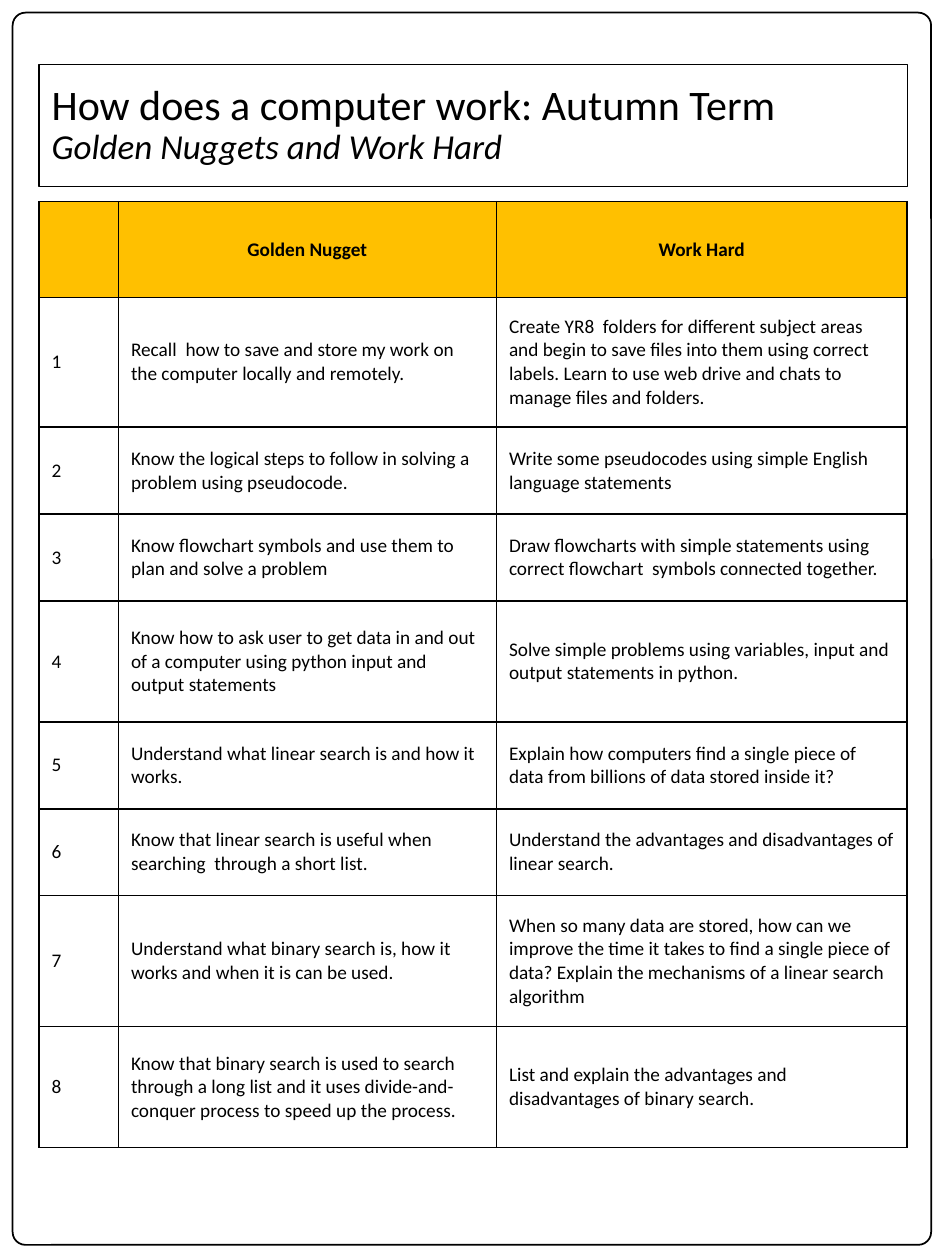
from dataclasses import dataclass

from lxml import etree
from pptx import Presentation
from pptx.dml.color import RGBColor
from pptx.enum import shapes, text
from pptx.oxml import ns
from pptx.util import Inches, Pt


@dataclass(frozen=True)
class Theme:
    font: str = "Calibri"
    ink: str = "000000"
    header: str = "FFC000"
    title: int = 24
    subtitle: int = 20
    body: int = 11
    thin: float = 0.75
    line: float = 1


THEME = Theme()

COLUMN_WIDTHS = [0.63, 3, 3.26]
ROW_HEIGHTS = [0.76, 1.03, 0.69, 0.69, 0.96, 0.69, 0.69, 1.04, 0.96]
HEADINGS = ("", "Golden Nugget", "Work Hard")
LESSONS = [
    ("Recall  how to save and store my work on the computer locally and remotely.",
     "Create YR8  folders for different subject areas and begin to save files into them "
     "using correct labels. Learn to use web drive and chats to manage files and folders."),
    ("Know the logical steps to follow in solving a problem using pseudocode.",
     "Write some pseudocodes using simple English language statements"),
    ("Know flowchart symbols and use them to  plan and solve a problem",
     "Draw flowcharts with simple statements using correct flowchart  symbols "
     "connected together."),
    ("Know how to ask user to get data in and out of a computer using python input and "
     "output statements",
     "Solve simple problems using variables, input and output statements in python."),
    ("Understand what linear search is and how it works.",
     "Explain how computers find a single piece of  data from billions of data stored "
     "inside it?"),
    ("Know that linear search is useful when searching  through a short list.",
     "Understand the advantages and disadvantages of linear search."),
    ("Understand what binary search is, how it works and when it is can be used.",
     "When so many data are stored, how can we improve the time it takes to find a single "
     "piece of data? Explain the mechanisms of a linear search algorithm"),
    ("Know that binary search is used to search through a long list and it uses "
     "divide-and-conquer process to speed up the process.",
     "List and explain the advantages and disadvantages of binary search."),
]


def style_run(run, size, bold=False, italic=False):
    run.font.name = THEME.font
    run.font.size = Pt(size)
    run.font.bold = bold
    run.font.italic = italic
    run.font.color.rgb = RGBColor.from_string(THEME.ink)


def outline(shape, width):
    shape.line.color.rgb = RGBColor.from_string(THEME.ink)
    shape.line.width = Pt(width)


def add_borders(cell):
    properties = cell._tc.get_or_add_tcPr()
    for side in ("lnL", "lnR", "lnT", "lnB"):
        border = etree.SubElement(properties, ns.qn(f"a:{side}"), w=str(Pt(THEME.line)))
        fill = etree.SubElement(border, ns.qn("a:solidFill"))
        etree.SubElement(fill, ns.qn("a:srgbClr"), val=THEME.ink)


def place_title(slide, left, top, width, height):
    title = slide.shapes.title
    title.left, title.top = Inches(left), Inches(top)
    title.width, title.height = Inches(width), Inches(height)
    outline(title, THEME.thin)
    frame = title.text_frame
    frame.text = "How does a computer work: Autumn Term\vGolden Nuggets and Work Hard"
    frame.word_wrap = True
    frame.auto_size = text.MSO_AUTO_SIZE.NONE
    frame.vertical_anchor = text.MSO_ANCHOR.MIDDLE
    paragraph = frame.paragraphs[0]
    paragraph.alignment = text.PP_ALIGN.LEFT
    paragraph.line_spacing = 0.9
    heading, subtitle = paragraph.runs
    style_run(heading, THEME.title)
    style_run(subtitle, THEME.subtitle, italic=True)


def fill_cell(cell, content, is_header):
    add_borders(cell)
    if is_header:
        cell.fill.solid()
        cell.fill.fore_color.rgb = RGBColor.from_string(THEME.header)
    else:
        cell.fill.background()
    cell.vertical_anchor = text.MSO_ANCHOR.MIDDLE
    cell.text_frame.text = content
    paragraph = cell.text_frame.paragraphs[0]
    paragraph.alignment = text.PP_ALIGN.CENTER if is_header else text.PP_ALIGN.LEFT
    for run in paragraph.runs:
        style_run(run, THEME.body, bold=is_header)


def add_lesson_table(slide, left, top, width, height):
    rows = [HEADINGS] + [(str(number), *lesson) for number, lesson in enumerate(LESSONS, 1)]
    table = slide.shapes.add_table(
        len(rows), len(HEADINGS),
        Inches(left), Inches(top), Inches(width), Inches(height)).table
    table.first_row = table.horz_banding = False
    for column, column_width in zip(table.columns, COLUMN_WIDTHS):
        column.width = Inches(column_width)
    for row, row_height, contents in zip(table.rows, ROW_HEIGHTS, rows):
        row.height = Inches(row_height)
        for cell, content in zip(row.cells, contents):
            fill_cell(cell, content, contents is HEADINGS)


def add_page_frame(slide, left, top, width, height):
    frame = slide.shapes.add_shape(
        shapes.MSO_SHAPE.ROUNDED_RECTANGLE,
        Inches(left), Inches(top), Inches(width), Inches(height))
    frame.adjustments[0] = 0.014
    frame.shadow.inherit = False
    frame.fill.background()
    outline(frame, THEME.line)


def main():
    presentation = Presentation()
    presentation.slide_width, presentation.slide_height = Inches(7.5), Inches(10)
    slide = presentation.slides.add_slide(presentation.slide_layouts.get_by_name("Title Only"))
    left, width = 0.31, sum(COLUMN_WIDTHS)
    place_title(slide, left, 0.51, width, 0.97)
    add_lesson_table(slide, left, 1.6, width, sum(ROW_HEIGHTS))
    add_page_frame(slide, 0.1, 0.1, 7.29, 9.78)
    presentation.save("out.pptx")


if __name__ == "__main__":
    main()
